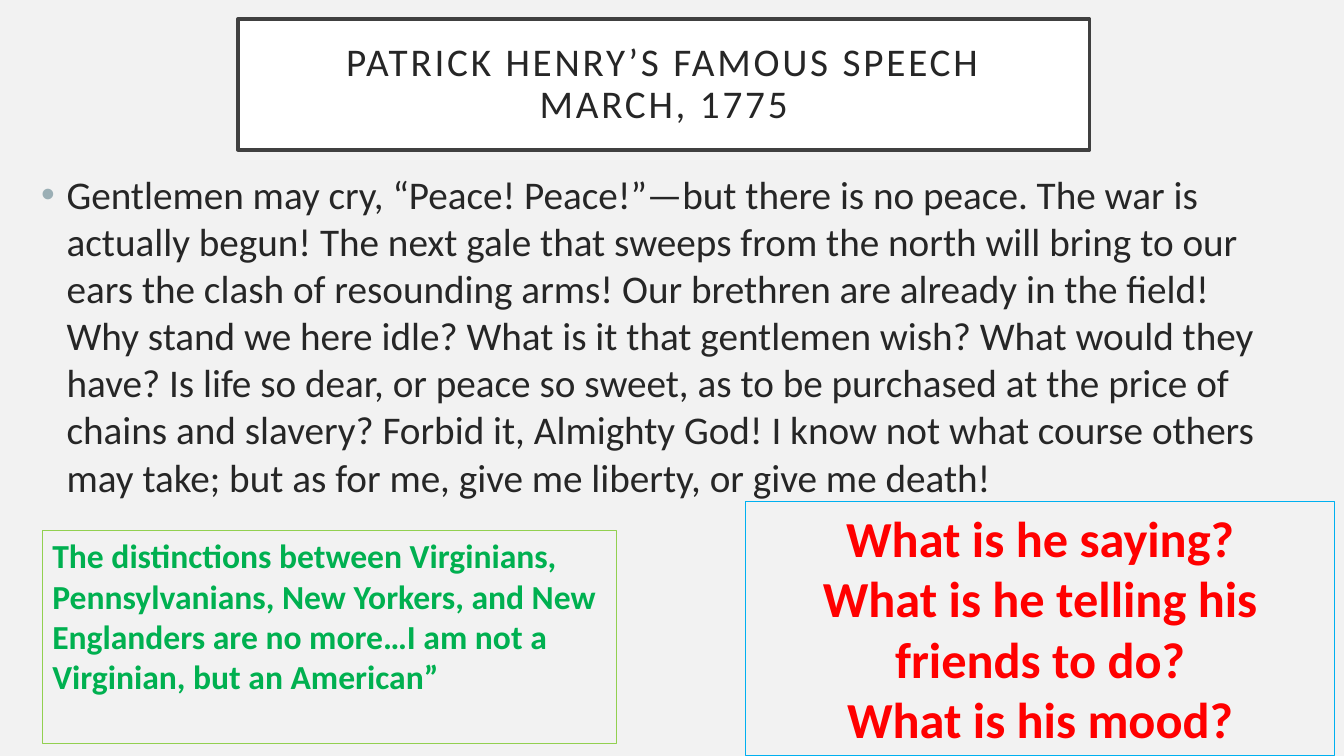
from lxml import etree
from pptx import Presentation, util as u
from pptx.dml.color import RGBColor
from pptx.enum import shapes, text
from pptx.oxml.ns import qn

TITLE = "PATRICK HENRY’S FAMOUS SPEECH\vMARCH, 1775"
SPEECH = (
    "Gentlemen may cry, “Peace! Peace!”—but there is no peace. The war is "
    "actually begun! The next gale that sweeps from the north will bring to "
    "our ears the clash of resounding arms! Our brethren are already in the "
    "field! Why stand we here idle? What is it that gentlemen wish? What "
    "would they have? Is life so dear, or peace so sweet, as to be purchased "
    "at the price of chains and slavery? Forbid it, Almighty God! I know not "
    "what course others may take; but as for me, give me liberty, or give me "
    "death!"
)
ASKS = ["What is he saying?", "What is he telling his friends to do?",
        "What is his mood?"]
QUOTE = ("The distinctions between Virginians, Pennsylvanians, New Yorkers, "
         "and New Englanders are no more…I am not a Virginian, but an American”")


def color(code):
    return RGBColor.from_string(code)


class Deck:
    font = "Calibri"
    ink = "262626"
    left, center = text.PP_ALIGN.LEFT, text.PP_ALIGN.CENTER

    def __init__(self, back):
        self.prs = Presentation()
        self.prs.slide_width, self.prs.slide_height = u.Cm(33.87), u.Cm(19.05)
        self.slide = self.prs.slides.add_slide(self.prs.slide_layouts[6])
        fill = self.slide.background.fill
        fill.solid()
        fill.fore_color.rgb = color(back)

    def label(self, shape, lines, size, ink, align, bold=False):
        """Fill the shape with one styled paragraph per line."""
        frame = shape.text_frame
        frame.word_wrap = True
        frame.vertical_anchor = text.MSO_ANCHOR.TOP
        frame.text = "\n".join(lines)
        for para in frame.paragraphs:
            para.alignment = align
            font = para.font
            font.name, font.size, font.bold = self.font, u.Pt(size), bold
            font.color.rgb = color(ink)
        return frame

    def box(self, place, line, width, fill=None):
        shape = self.slide.shapes.add_shape(
            shapes.MSO_SHAPE.RECTANGLE, *map(u.Cm, place))
        shape.shadow.inherit = False
        shape.line.color.rgb = color(line)
        shape.line.width = u.Pt(width)
        if fill:
            shape.fill.solid()
            shape.fill.fore_color.rgb = color(fill)
        else:
            shape.fill.background()
        return shape

    def title(self, place, words):
        shape = self.box(place, "404040", 2.5, "FFFFFF")
        frame = self.label(shape, [words], 28, self.ink, self.center)
        frame.vertical_anchor = text.MSO_ANCHOR.MIDDLE
        frame.margin_left = frame.margin_right = u.Cm(0.5)
        frame.margin_top = frame.margin_bottom = u.Cm(0.5)
        para = frame.paragraphs[0]
        para.line_spacing = 0.9
        for run in para.runs:
            run._r.get_or_add_rPr().set("spc", "200")

    def bullet(self, place, words, dot):
        shape = self.slide.shapes.add_textbox(*map(u.Cm, place))
        frame = self.label(shape, [words], 28, self.ink, self.left)
        para = frame.paragraphs[0]
        para.space_before = u.Pt(10)
        props = para._p.get_or_add_pPr()
        indent = u.Cm(0.64)
        props.set("marL", str(indent))
        props.set("indent", str(-indent))
        tint = etree.Element(qn("a:buClr"))
        etree.SubElement(tint, qn("a:srgbClr"), val=dot)
        face = etree.Element(qn("a:buFont"), typeface="Arial")
        sign = etree.Element(qn("a:buChar"), char="•")
        style = props.find(qn("a:defRPr"))
        for item in (tint, face, sign):
            style.addprevious(item)

    def note(self, place, lines, line, size, ink, align):
        shape = self.box(place, line, 0.75)
        self.label(shape, lines, size, ink, align, bold=True)


def main():
    deck = Deck("F2F2F2")
    deck.title((6, 0.48, 21.46, 3.3), TITLE)
    deck.bullet((0.79, 4.17, 31.88, 8.61), SPEECH, "9BAFB5")
    deck.note((18.8, 12.65, 14.83, 6.4), ASKS, "00B0F0", 36, "FF0000",
              deck.center)
    deck.note((1.07, 13.36, 14.48, 5.38), [QUOTE], "92D050", 24, "00B050",
              deck.left)
    deck.prs.save("out.pptx")


if __name__ == "__main__":
    main()
